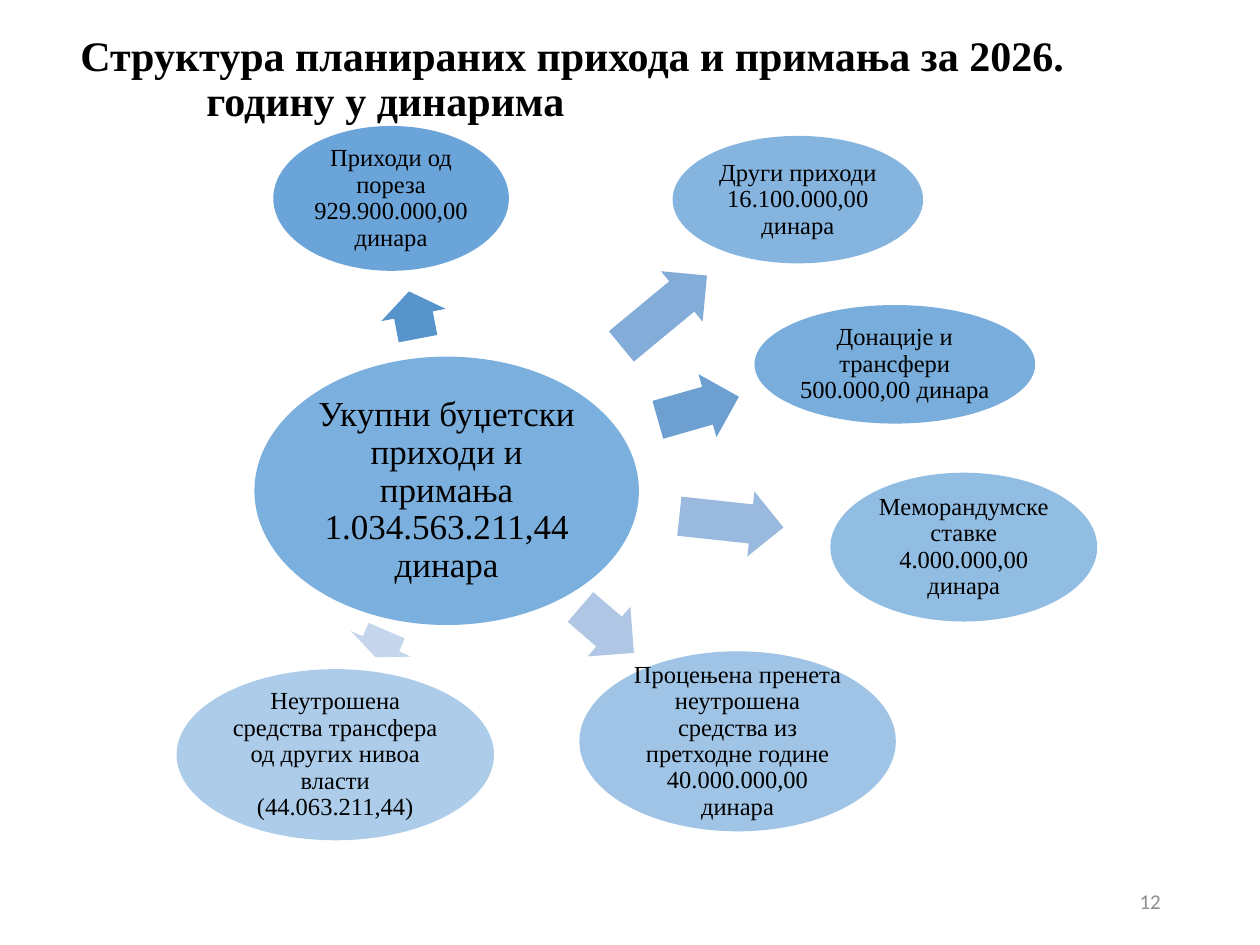
from lxml.etree import SubElement
from pptx import Presentation
from pptx.dml.color import RGBColor
from pptx.enum.shapes import MSO_SHAPE as Shape
from pptx.enum.text import MSO_ANCHOR as Anchor, PP_ALIGN as Align
from pptx.oxml.ns import qn
from pptx.util import Cm, Pt

SERIF = "Times New Roman"
BLUE = "5B9BD5"
ARROW_HEIGHT = 1.32

CENTRE = ("Укупни буџетски приходи и примања 1.034.563.211,44 динара",
          (5.13, 7.19, 7.75, 5.41))

# text, ellipse box, opacity %, arrow (left, top, width), arrow angle, arrow colour
SOURCES = [
    ("Приходи од пореза 929.900.000,00динара",
     (5.51, 2.54, 4.75, 2.92), 90, (7.85, 5.69, 0.97), 259.2, "5794CB"),
    ("Донације и трансфери 500.000,00 динара",
     (15.21, 6.15, 5.66, 2.39), 82, (13.23, 7.57, 1.7), 344.1, "6DA0D1"),
    ("Други приходи 16.100.000,00 динара",
     (13.56, 2.74, 5.05, 2.57), 74, (12.27, 5.61, 2.24), 320.4, "83ACD8"),
    ("Меморандумске ставке 4.000.000,00 динара",
     (16.74, 9.53, 5.38, 3), 66, (13.69, 9.86, 2.11), 6.2, "99B9DE"),
    ("Процењена пренета неутрошена средства из претходне године "
     "40.000.000,00 динара",
     (11.68, 13.13, 6.38, 3.63), 58, (11.53, 12.04, 1.42), 40.7, "AFC7E5"),
    ("Неутрошена средства трансфера од других нивоа власти (44.063.211,44)",
     (3.56, 13.49, 6.4, 3.45), 50, (7.39, 12.32, 0.58), 113, "C5D5EB"),
]


def set_values(target, values):
    for name, value in values.items():
        setattr(target, name, value)


def rgb(color):
    return RGBColor.from_string(color)


def write(shape, text, size, align, font=SERIF, color="000000", bold=False,
          spacing=0.9, margin=None):
    """Fill the shape with one wrapped, vertically centred paragraph."""
    frame = shape.text_frame
    set_values(frame, {"word_wrap": True, "vertical_anchor": Anchor.MIDDLE})
    if margin is not None:
        sides = ("left", "top", "right", "bottom")
        set_values(frame, {f"margin_{side}": Cm(margin) for side in sides})
    paragraph = frame.paragraphs[0]
    paragraph.text = text
    set_values(paragraph, {"alignment": align, "line_spacing": spacing})
    set_values(paragraph.font, {"name": font, "size": Pt(size), "bold": bold})
    paragraph.font.color.rgb = rgb(color)
    return paragraph


def add_text(slide, box, *args, **options):
    shape = slide.shapes.add_textbox(*map(Cm, box))
    return write(shape, *args, **options)


def add_filled(slide, kind, box, color, opacity=100):
    shape = slide.shapes.add_shape(kind, *map(Cm, box))
    shape.shadow.inherit = False
    shape.line.fill.background()
    shape.fill.solid()
    shape.fill.fore_color.rgb = rgb(color)
    if opacity < 100:
        fill_color = shape.fill._xPr.find(".//" + qn("a:srgbClr"))
        SubElement(fill_color, qn("a:alpha"), val=str(opacity * 1000))
    return shape


def add_ellipse(slide, text, box, opacity, size, margin):
    ellipse = add_filled(slide, Shape.OVAL, box, BLUE, opacity)
    write(ellipse, text, size, Align.CENTER, margin=margin)


def add_arrow(slide, place, angle, color):
    arrow = add_filled(slide, Shape.RIGHT_ARROW, (*place, ARROW_HEIGHT), color)
    arrow.adjustments[0] = 0.6
    arrow.adjustments[1] = 0.5
    arrow.rotation = angle


def add_title(slide):
    title = add_text(
        slide, (1.37, 0.69, 22.86, 1.85),
        "Структура планираних прихода и примања за 2026.\vгодину у динарима",
        24, Align.LEFT, bold=True)
    hanging = Cm(2.54)
    properties = title._p.get_or_add_pPr()
    properties.set("marL", str(hanging))
    properties.set("indent", str(-hanging))


def main():
    presentation = Presentation()
    set_values(presentation, {"slide_width": Cm(25.4), "slide_height": Cm(19.05)})
    slide = presentation.slides.add_slide(presentation.slide_layouts[6])

    add_title(slide)
    add_text(slide, (17.93, 17.65, 5.72, 1.02), "12", 12, Align.RIGHT,
             font="Calibri", color="8C8C8C", spacing=1)
    add_ellipse(slide, *CENTRE, opacity=80, size=20, margin=0.07)
    for text, box, opacity, place, angle, color in SOURCES:
        add_arrow(slide, place, angle, color)
        add_ellipse(slide, text, box, opacity, size=14, margin=0.05)

    presentation.save("out.pptx")


if __name__ == "__main__":
    main()
